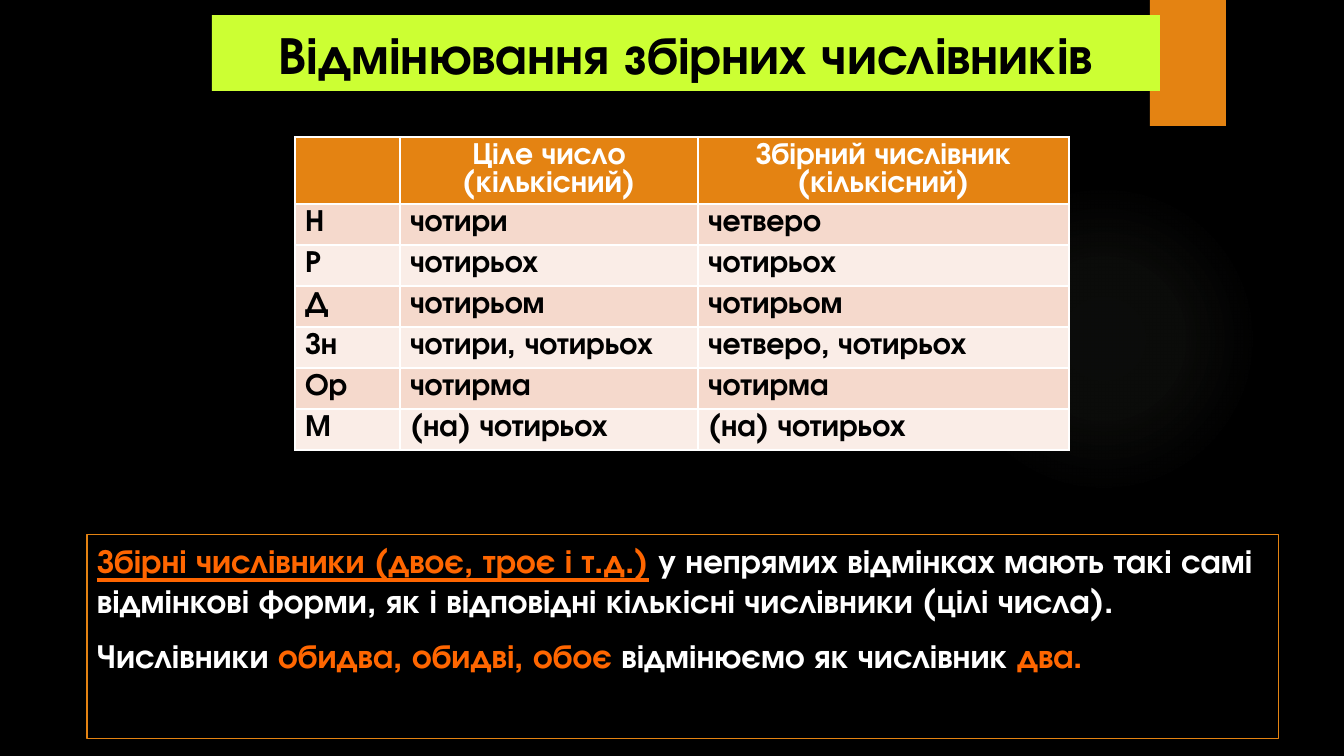
from lxml import etree
from pptx import Presentation
from pptx import util as u
from pptx.dml.color import RGBColor
from pptx.enum import shapes, text
from pptx.oxml import ns, parse_xml

BLACK = RGBColor(0x00, 0x00, 0x00)
WHITE = RGBColor(0xFF, 0xFF, 0xFF)
LIME = RGBColor(0xCC, 0xFF, 0x33)
ORANGE = RGBColor(0xE4, 0x83, 0x12)
ACCENT = RGBColor(0xFF, 0x66, 0x00)
PEACH = RGBColor(0xF5, 0xD9, 0xCC)
CREAM = RGBColor(0xFA, 0xED, 0xE7)
GLOW = RGBColor(0xA2, 0xAF, 0x92)

FONT = "TeX Gyre Adventor"
WIDTH, HEIGHT = 1344, 756
EMU_PER_PX = 12192000 / WIDTH

HEADER = ["", "Ціле число (кількісний)", "Збірний числівник\n(кількісний)"]
CASES = [
    ["Н", "чотири", "четверо"],
    ["Р", "чотирьох", "чотирьох"],
    ["Д", "чотирьом", "чотирьом"],
    ["Зн", "чотири, чотирьох", "четверо, чотирьох"],
    ["Ор", "чотирма", "чотирма"],
    ["М", "(на) чотирьох", "(на) чотирьох"],
]
RULES = [
    [("Збірні числівники (двоє, троє і т.д.)", ACCENT, True),
     (" у непрямих відмінках мають такі самі відмінкові форми, "
      "як і відповідні кількісні числівники (цілі числа).", WHITE, False)],
    [("Числівники ", WHITE, False),
     ("обидва, обидві, обоє ", ACCENT, False),
     ("відмінюємо як числівник ", WHITE, False),
     ("два.", ACCENT, False)],
]


def px(length):
    return u.Emu(round(length * EMU_PER_PX))


class SlideBuilder:
    def __init__(self, presentation):
        self.slide = presentation.slides.add_slide(presentation.slide_layouts[5])
        self.slide.background.fill.solid()
        self.slide.background.fill.fore_color.rgb = BLACK

    def add_run(self, paragraph, words, size, color, underline=False):
        run = paragraph.add_run()
        run.text = words
        font = run.font
        font.name, font.size, font.bold = FONT, u.Pt(size), True
        font.color.rgb = color
        if underline:
            font.underline = True

    def shape(self, kind, left, top, width, height, color):
        shape = self.slide.shapes.add_shape(kind, px(left), px(top), px(width), px(height))
        shape.shadow.inherit = False
        shape.fill.solid()
        shape.fill.fore_color.rgb = color
        shape.line.fill.background()
        return shape

    def glow(self, left, top, size, color, stops):
        shape = self.shape(shapes.MSO_SHAPE.OVAL, left, top, size, size, color)
        marks = "".join(
            f'<a:gs pos="{position * 1000}"><a:srgbClr val="{color}">'
            f'<a:alpha val="{alpha * 1000}"/></a:srgbClr></a:gs>'
            for position, alpha in stops)
        gradient = parse_xml(
            f'<a:gradFill {ns.nsdecls("a")}><a:gsLst>{marks}</a:gsLst>'
            '<a:path path="circle"><a:fillToRect l="50000" t="50000" r="50000" b="50000"/>'
            '</a:path></a:gradFill>')
        properties = shape.element.spPr
        properties.replace(properties.find(ns.qn("a:solidFill")), gradient)

    def title(self, left, top, width, height, words):
        title = self.slide.shapes.title
        title.left, title.top, title.width, title.height = map(px, (left, top, width, height))
        title.fill.solid()
        title.fill.fore_color.rgb = LIME
        frame = title.text_frame
        frame.word_wrap = True
        frame.auto_size = text.MSO_AUTO_SIZE.NONE
        frame.vertical_anchor = text.MSO_ANCHOR.MIDDLE
        paragraph = frame.paragraphs[0]
        paragraph.alignment = text.PP_ALIGN.CENTER
        self.add_run(paragraph, words, 37.8, BLACK)
        title.element.getparent().append(title.element)

    def text_box(self, left, top, width, height, paragraphs):
        box = self.slide.shapes.add_textbox(px(left), px(top), px(width), px(height))
        box.line.color.rgb = ORANGE
        box.line.width = u.Pt(0.75)
        frame = box.text_frame
        frame.word_wrap = True
        for index, runs in enumerate(paragraphs):
            paragraph = frame.add_paragraph() if index else frame.paragraphs[0]
            if index:
                paragraph.space_before = u.Pt(10)
            for words, color, underline in runs:
                self.add_run(paragraph, words, 24, color, underline)

    def cell(self, cell, words, fill, color, alignment):
        properties = cell._tc.get_or_add_tcPr()
        for side in ("lnL", "lnR", "lnT", "lnB"):
            line = etree.SubElement(properties, ns.qn(f"a:{side}"), w=str(u.Pt(1)))
            solid = etree.SubElement(line, ns.qn("a:solidFill"))
            etree.SubElement(solid, ns.qn("a:srgbClr"), val=str(WHITE))
        cell.fill.solid()
        cell.fill.fore_color.rgb = fill
        if not words:
            return
        for index, part in enumerate(words.split("\n")):
            frame = cell.text_frame
            paragraph = frame.add_paragraph() if index else frame.paragraphs[0]
            paragraph.alignment = alignment
            paragraph.line_spacing = u.Pt(20)
            self.add_run(paragraph, part, 22, color)

    def table(self, left, top, columns, header_height, row_height, rows):
        heights = [header_height] + [row_height] * (len(rows) - 1)
        table = self.slide.shapes.add_table(
            len(rows), len(columns), px(left), px(top), px(sum(columns)), px(sum(heights))).table
        for column, width in zip(table.columns, columns):
            column.width = px(width)
        for index, (row, height) in enumerate(zip(table.rows, heights)):
            row.height = px(height)
            if index == 0:
                style = ORANGE, WHITE, text.PP_ALIGN.CENTER
            else:
                style = PEACH if index % 2 else CREAM, BLACK, text.PP_ALIGN.LEFT
            for cell, words in zip(row.cells, rows[index]):
                self.cell(cell, words, *style)


def main():
    presentation = Presentation()
    presentation.slide_width = px(WIDTH)
    presentation.slide_height = px(HEIGHT)
    builder = SlideBuilder(presentation)
    builder.glow(949, 184, 310, GLOW, [(0, 7), (36, 6), (69, 0), (100, 0)])
    builder.shape(shapes.MSO_SHAPE.RECTANGLE, 1150, 0, 76, 126, ORANGE)
    builder.title(212, 15, 948, 76, "Відмінювання збірних числівників")
    builder.text_box(87, 535, 1192, 204, RULES)
    builder.table(295, 137, [105, 298, 371], 67, 41, [HEADER] + CASES)
    presentation.save("out.pptx")


if __name__ == "__main__":
    main()
